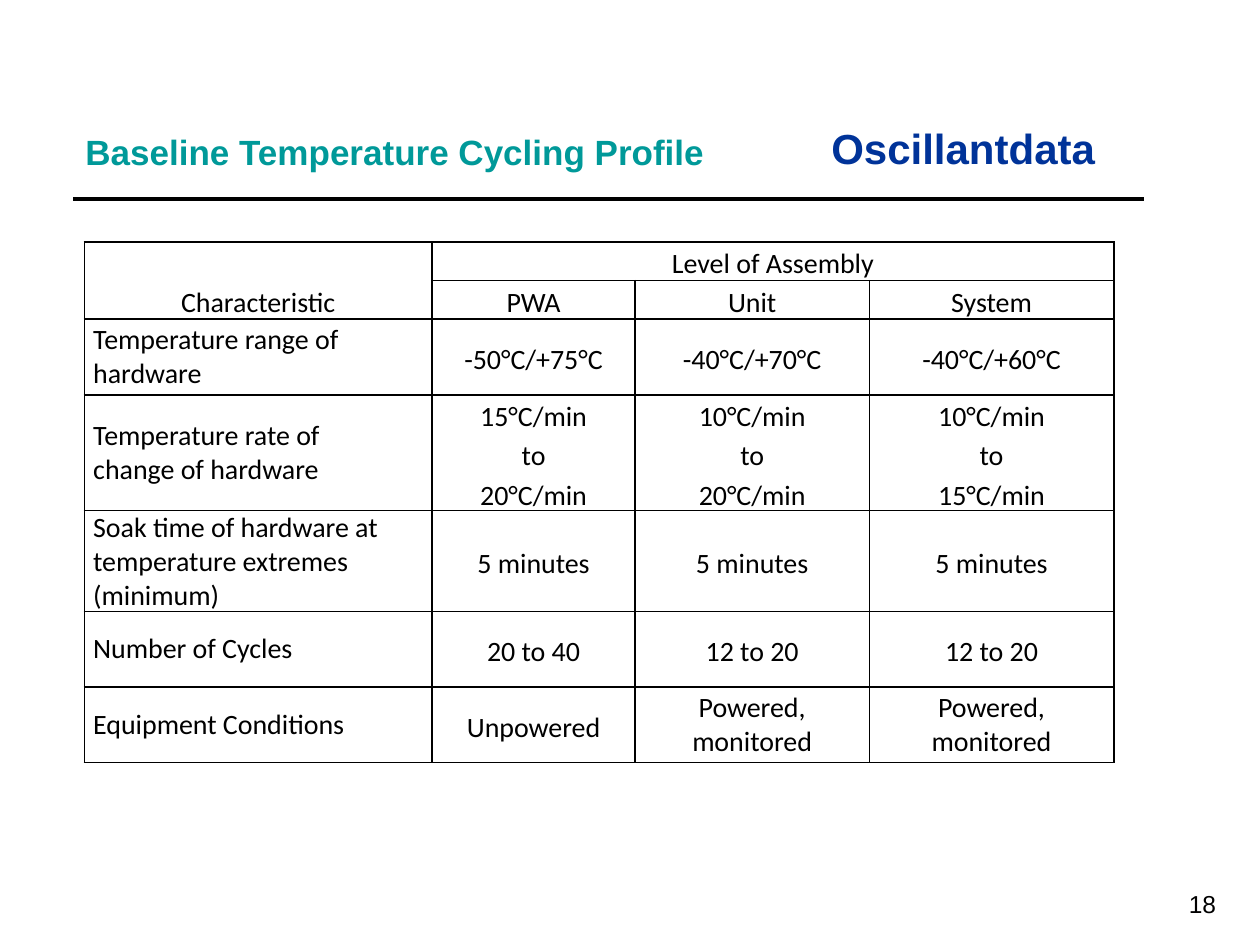
"""Build the baseline temperature cycling profile slide."""
from dataclasses import dataclass

from lxml.etree import SubElement
from pptx import Presentation
from pptx.dml.color import RGBColor
from pptx.enum.shapes import MSO_CONNECTOR
from pptx.enum.text import MSO_ANCHOR, MSO_AUTO_SIZE, PP_ALIGN
from pptx.oxml.ns import qn
from pptx.util import Inches, Pt

COLORS = {"black": "000000", "number": "010000", "title": "009999", "brand": "003399"}
COLUMN_WIDTHS = [2.76, 1.61, 1.86, 1.94]
ROW_HEIGHTS = [0.3] * 2 + [0.6] * 5
HEADER_ROWS = 2


@dataclass
class Label:
    text: str
    left: float
    top: float
    width: float
    height: float
    size: int
    color: str
    bold: bool = True
    wrap: bool = True
    align: PP_ALIGN = PP_ALIGN.LEFT
    anchor: MSO_ANCHOR = MSO_ANCHOR.TOP
    spacing: float | None = None
    auto_size: MSO_AUTO_SIZE = MSO_AUTO_SIZE.NONE


@dataclass
class Entry:
    text: str
    align: PP_ALIGN = PP_ALIGN.CENTER
    spacing: float | None = 1.15
    anchor: MSO_ANCHOR = MSO_ANCHOR.MIDDLE


LABELS = [
    Label("18", 7.67, 6.92, 2.08, 0.5, 14, "number", bold=False, wrap=False,
          align=PP_ALIGN.RIGHT, anchor=MSO_ANCHOR.MIDDLE),
    Label("Baseline Temperature Cycling Profile", 0.58, 1.08, 5.5, 0.42, 20, "title",
          spacing=0.7),
    Label("Oscillantdata", 6.5, 0.92, 2.33, 0.5, 24, "brand", wrap=False,
          auto_size=MSO_AUTO_SIZE.SHAPE_TO_FIT_TEXT),
]


def body_row(name: str, *values: str, spacing: float | None = 1.15) -> list[Entry]:
    """Return a left-aligned characteristic followed by its centred values."""
    return [Entry(name, PP_ALIGN.LEFT, None)] + [Entry(value, spacing=spacing) for value in values]


POWERED = Entry("Powered,\nmonitored", spacing=None)
ROWS = [
    [Entry(""), Entry("Level of Assembly"), Entry(""), Entry("")],
    [Entry("Characteristic", anchor=MSO_ANCHOR.TOP), Entry("PWA"), Entry("Unit"),
     Entry("System")],
    body_row("Temperature range of\nhardware", "-50°C/+75°C", "-40°C/+70°C", "-40°C/+60°C"),
    body_row("Temperature rate of\nchange of hardware", "15°C/min\nto\n20°C/min",
             "10°C/min\nto\n20°C/min", "10°C/min\nto\n15°C/min"),
    body_row("Soak time of hardware at\ntemperature extremes (minimum)", *["5 minutes"] * 3),
    body_row("Number of Cycles", "20 to 40", "12 to 20", "12 to 20"),
    body_row("Equipment Conditions", "Unpowered") + [POWERED, POWERED],
]


def style_paragraph(paragraph, font_name: str, size: int, color: str, bold: bool,
                    align: PP_ALIGN, spacing: float | None) -> None:
    """Set the font, alignment and line spacing of a paragraph."""
    paragraph.alignment = align
    if spacing:
        paragraph.line_spacing = spacing
    font = paragraph.font
    font.name, font.size, font.bold = font_name, Pt(size), bold
    font.color.rgb = RGBColor.from_string(COLORS[color])


def add_label(slide, label: Label) -> None:
    """Add one line of text in its own box."""
    shape = slide.shapes.add_textbox(Inches(label.left), Inches(label.top),
                                     Inches(label.width), Inches(label.height))
    frame = shape.text_frame
    frame.text = label.text
    frame.word_wrap = label.wrap
    frame.auto_size = label.auto_size
    frame.vertical_anchor = label.anchor
    style_paragraph(frame.paragraphs[0], "Arial", label.size, label.color, label.bold,
                    label.align, label.spacing)


def add_rule(slide) -> None:
    """Add the horizontal rule under the title."""
    rule = slide.shapes.add_connector(MSO_CONNECTOR.STRAIGHT, Inches(0.58), Inches(1.58),
                                      Inches(9.08), Inches(1.58))
    rule.line.color.rgb = RGBColor.from_string(COLORS["black"])
    rule.line.width = Pt(2.25)
    SubElement(rule._element.spPr, qn("a:effectLst"))


def set_borders(cell, hidden: str) -> None:
    """Draw the cell's borders in black, leaving out the hidden side."""
    properties = cell._tc.get_or_add_tcPr()
    for index, side in enumerate(("lnL", "lnR", "lnT", "lnB")):
        line = SubElement(properties, qn(f"a:{side}"), w=str(Pt(1)))
        if side == hidden:
            SubElement(line, qn("a:noFill"))
        else:
            fill = SubElement(line, qn("a:solidFill"))
            SubElement(fill, qn("a:srgbClr"), val=COLORS["black"])
        properties.remove(line)
        properties.insert(index, line)


def fill_cell(cell, entry: Entry, hidden: str) -> None:
    """Write an entry into a cell and style it."""
    cell.margin_left = cell.margin_right = Inches(0.07)
    cell.margin_top = cell.margin_bottom = 0
    cell.vertical_anchor = entry.anchor
    cell.fill.background()
    set_borders(cell, hidden)
    cell.text = entry.text
    for paragraph in cell.text_frame.paragraphs:
        style_paragraph(paragraph, "Calibri", 16, "black", False, entry.align, entry.spacing)


def add_profile_table(slide) -> None:
    """Add the table of cycling characteristics by level of assembly."""
    frame = slide.shapes.add_table(len(ROWS), len(COLUMN_WIDTHS), Inches(0.67), Inches(1.92),
                                   Inches(8.17), Inches(4.13))
    table = frame.table
    table.first_row = table.horz_banding = False
    for column, width in zip(table.columns, COLUMN_WIDTHS):
        column.width = Inches(width)
    for row, height in zip(table.rows, ROW_HEIGHTS):
        row.height = Inches(height)
    frame.height = Inches(4.13)
    table.cell(0, 1).merge(table.cell(0, 3))
    for row_index, entries in enumerate(ROWS):
        for column_index, entry in enumerate(entries):
            hidden = ""
            if column_index == 0 and row_index < HEADER_ROWS:
                hidden = ("lnB", "lnT")[row_index]
            fill_cell(table.cell(row_index, column_index), entry, hidden)


def main() -> None:
    """Build and save the presentation."""
    presentation = Presentation()
    presentation.slide_width, presentation.slide_height = Inches(10), Inches(7.5)
    slide = presentation.slides.add_slide(presentation.slide_layouts[6])
    add_rule(slide)
    for label in LABELS:
        add_label(slide, label)
    add_profile_table(slide)
    presentation.save("out.pptx")


if __name__ == "__main__":
    main()
